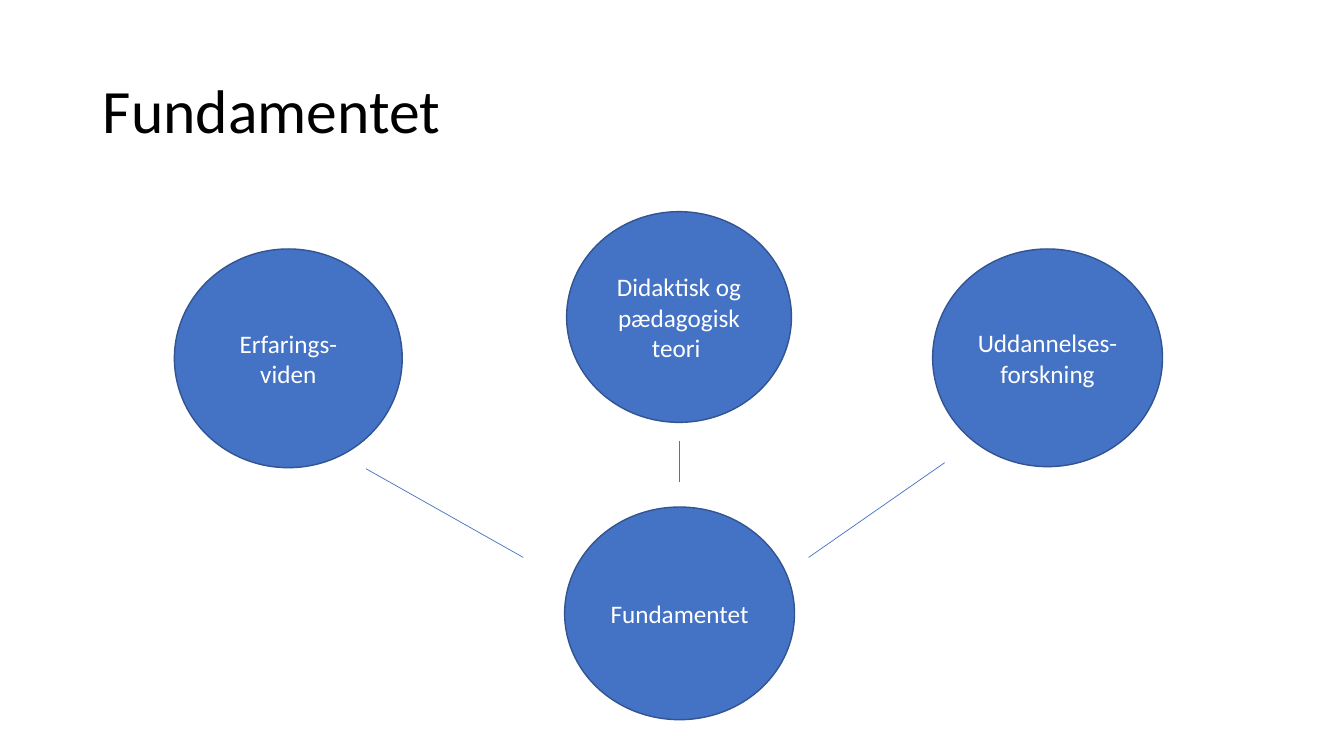
from lxml.etree import SubElement
from pptx import Presentation
from pptx.dml.color import RGBColor
from pptx.enum.shapes import MSO_CONNECTOR, MSO_SHAPE
from pptx.enum.text import MSO_ANCHOR, PP_ALIGN
from pptx.oxml.ns import qn
from pptx.util import Inches, Pt

BLACK = RGBColor(0x00, 0x00, 0x00)
WHITE = RGBColor(0xFF, 0xFF, 0xFF)
BLUE = RGBColor(0x44, 0x72, 0xC4)
DARK_BLUE = RGBColor(0x32, 0x54, 0x91)


def write(shape, text, size=18, color=WHITE, align=PP_ALIGN.CENTER, spacing=1.0):
    frame = shape.text_frame
    frame.word_wrap = True
    frame.vertical_anchor = MSO_ANCHOR.MIDDLE
    paragraph = frame.paragraphs[0]
    paragraph.text = text
    paragraph.alignment = align
    paragraph.line_spacing = spacing
    for run in paragraph.runs:
        run.font.name = "Calibri"
        run.font.size = Pt(size)
        run.font.color.rgb = color


prs = Presentation()
prs.slide_width = Inches(13.33)
prs.slide_height = Inches(7.5)
slide = prs.slides.add_slide(prs.slide_layouts[5])

# Title
heading = slide.shapes.title
heading.left, heading.top = Inches(0.92), Inches(0.4)
heading.width, heading.height = Inches(11.5), Inches(1.45)
write(heading, "Fundamentet", size=44, color=BLACK, align=PP_ALIGN.LEFT, spacing=0.9)

# The foundation and its three sources
circles = [
    ("Fundamentet", 5.6, 5.03, 2.28, 2.11),
    ("Uddannelses-\vforskning", 9.25, 2.47, 2.28, 2.16),
    ("Didaktisk og pædagogisk teori ", 5.62, 2.1, 2.23, 2.09),
    ("Erfarings-viden", 1.73, 2.47, 2.26, 2.17),
]
for label, *box in circles:
    circle = slide.shapes.add_shape(MSO_SHAPE.OVAL, *map(Inches, box))
    circle.shadow.inherit = False
    circle.fill.solid()
    circle.fill.fore_color.rgb = BLUE
    circle.line.color.rgb = DARK_BLUE
    circle.line.width = Pt(1)
    write(circle, label)

# Lines from the sources towards the foundation
links = [
    (3.63, 4.65, 5.19, 5.53),
    (9.37, 4.59, 8.02, 5.53),
    (6.74, 4.38, 6.74, 4.78),
]
for ends in links:
    link = slide.shapes.add_connector(MSO_CONNECTOR.STRAIGHT, *map(Inches, ends))
    link.line.color.rgb = BLUE
    link.line.width = Pt(0.5)
    SubElement(link._element.spPr, qn("a:effectLst"))

prs.save("out.pptx")
